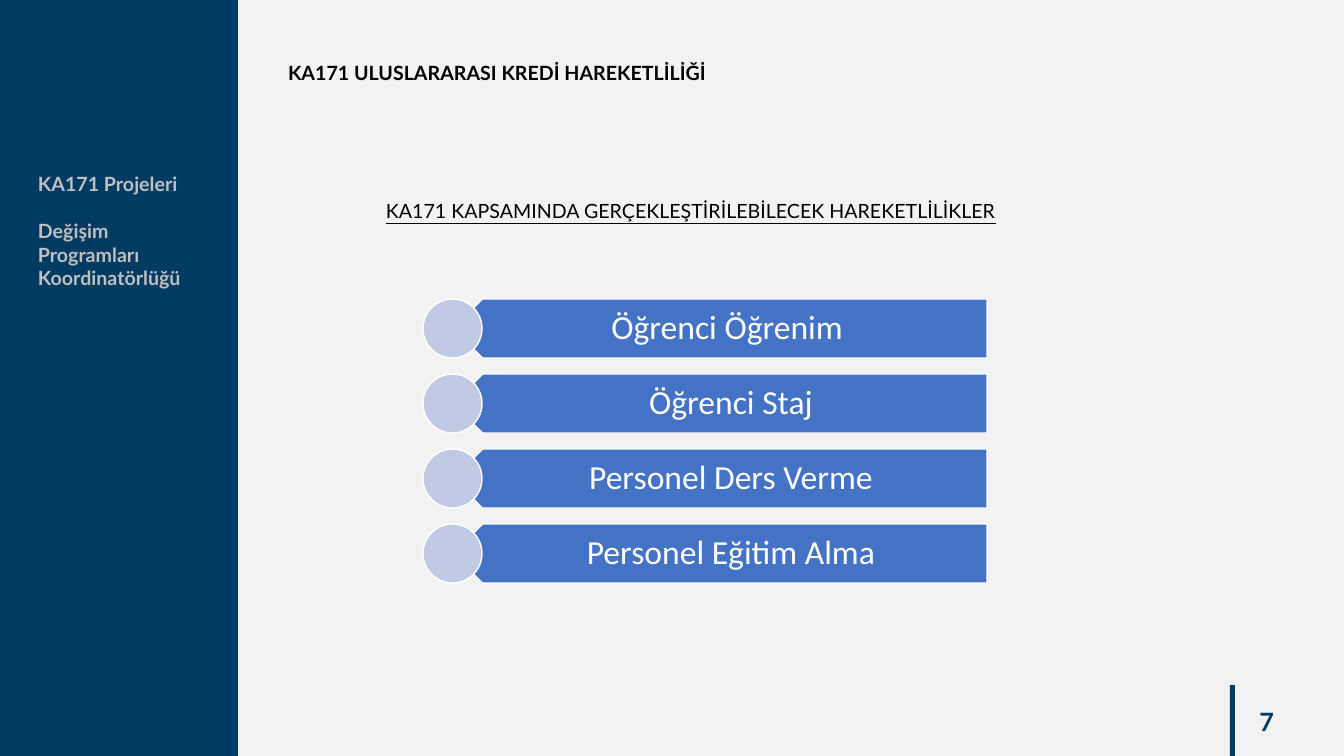
from pptx import Presentation
from pptx import util as u
from pptx.dml.color import RGBColor
from pptx.enum import shapes, text

TITLE = "KA171 ULUSLARARASI KREDİ HAREKETLİLİĞİ"
SUBTITLE = "KA171 KAPSAMINDA GERÇEKLEŞTİRİLEBİLECEK HAREKETLİLİKLER"
SIDEBAR = ["KA171 Projeleri", "Değişim Programları Koordinatörlüğü"]
MOBILITIES = ["Öğrenci Öğrenim ", "Öğrenci Staj", "Personel Ders Verme", "Personel Eğitim Alma"]
PAGE_NUMBER = "7"

COLOURS = {
    "page": "F2F2F2", "navy": "003B64", "grey": "BFBFBF", "black": "000000",
    "blue": "4472C4", "lilac": "C1C9E4", "white": "FFFFFF",
}
ROW_TOP, ROW_PITCH, ROW_HEIGHT = 299, 75, 59
CIRCLE_LEFT, ARROW_LEFT, ARROW_WIDTH = 423, 453, 534
LABEL_LEFT, LABEL_WIDTH = 468, 519


def px(length):
    return u.Emu(round(length * 914400 / 100.8))


def colour(name):
    return RGBColor.from_string(COLOURS[name])


def add_preset(slide, kind, place, fill, outline=None):
    shape = slide.shapes.add_shape(kind, *map(px, place))
    shape.shadow.inherit = False
    shape.fill.solid()
    shape.fill.fore_color.rgb = colour(fill)
    if outline:
        shape.line.color.rgb = colour(outline)
        shape.line.width = u.Pt(1)
    else:
        shape.line.fill.background()
    return shape


def write(box, lines, size, tint, font="Lato", bold=False, underline=False,
          align=text.PP_ALIGN.LEFT, anchor=text.MSO_ANCHOR.TOP, spacing=1.0, gap=0):
    """Fill a box with paragraphs of one style; gap is the points between them."""
    frame = box.text_frame
    frame.text = "\n".join(lines)
    frame.word_wrap = True
    frame.auto_size = text.MSO_AUTO_SIZE.NONE
    frame.vertical_anchor = anchor
    for index, para in enumerate(frame.paragraphs):
        para.alignment = align
        para.line_spacing = spacing
        para.space_before = u.Pt(gap if index else 0)
        for span in para.runs:
            span.font.name = font
            span.font.size = u.Pt(size)
            span.font.bold = bold
            span.font.underline = underline
            span.font.color.rgb = colour(tint)
    return frame


def add_text(slide, place, lines, size, tint, **style):
    box = slide.shapes.add_textbox(*map(px, place))
    return write(box, lines, size, tint, **style)


def add_mobility(slide, index, label):
    top = ROW_TOP + index * ROW_PITCH
    arrow = add_preset(slide, shapes.MSO_SHAPE.PENTAGON,
                       (ARROW_LEFT, top, ARROW_WIDTH, ROW_HEIGHT), "blue", "white")
    arrow.rotation = 180
    frame = add_text(slide, (LABEL_LEFT, top, LABEL_WIDTH, ROW_HEIGHT), [label], 24, "white",
                     font="Calibri", align=text.PP_ALIGN.CENTER,
                     anchor=text.MSO_ANCHOR.MIDDLE, spacing=0.9)
    frame.margin_left, frame.margin_right = px(26), px(19)
    frame.margin_top = frame.margin_bottom = px(10)
    add_preset(slide, shapes.MSO_SHAPE.OVAL,
               (CIRCLE_LEFT, top, ROW_HEIGHT, ROW_HEIGHT), "lilac", "white")


def main():
    deck = Presentation()
    deck.slide_width, deck.slide_height = px(1344), px(756)
    slide = deck.slides.add_slide(deck.slide_layouts[5])
    slide.background.fill.solid()
    slide.background.fill.fore_color.rgb = colour("page")

    add_preset(slide, shapes.MSO_SHAPE.RECTANGLE, (0, 0, 238, 756), "navy")
    add_preset(slide, shapes.MSO_SHAPE.RECTANGLE, (1230, 685, 5, 71), "navy")
    add_text(slide, (982, 701, 302, 40), [PAGE_NUMBER], 18, "navy", bold=True,
             align=text.PP_ALIGN.RIGHT, anchor=text.MSO_ANCHOR.MIDDLE)
    add_text(slide, (28, 167, 176, 159), SIDEBAR, 14, "grey", bold=True, gap=17)

    title = slide.shapes.title
    title.left, title.top, title.width, title.height = map(px, (278, 56, 838, 57))
    write(title, [TITLE], 14, "black", bold=True)
    add_text(slide, (376, 194, 866, 105), [SUBTITLE], 14, "black", underline=True)

    for index, label in enumerate(MOBILITIES):
        add_mobility(slide, index, label)
    deck.save("out.pptx")


if __name__ == "__main__":
    main()
